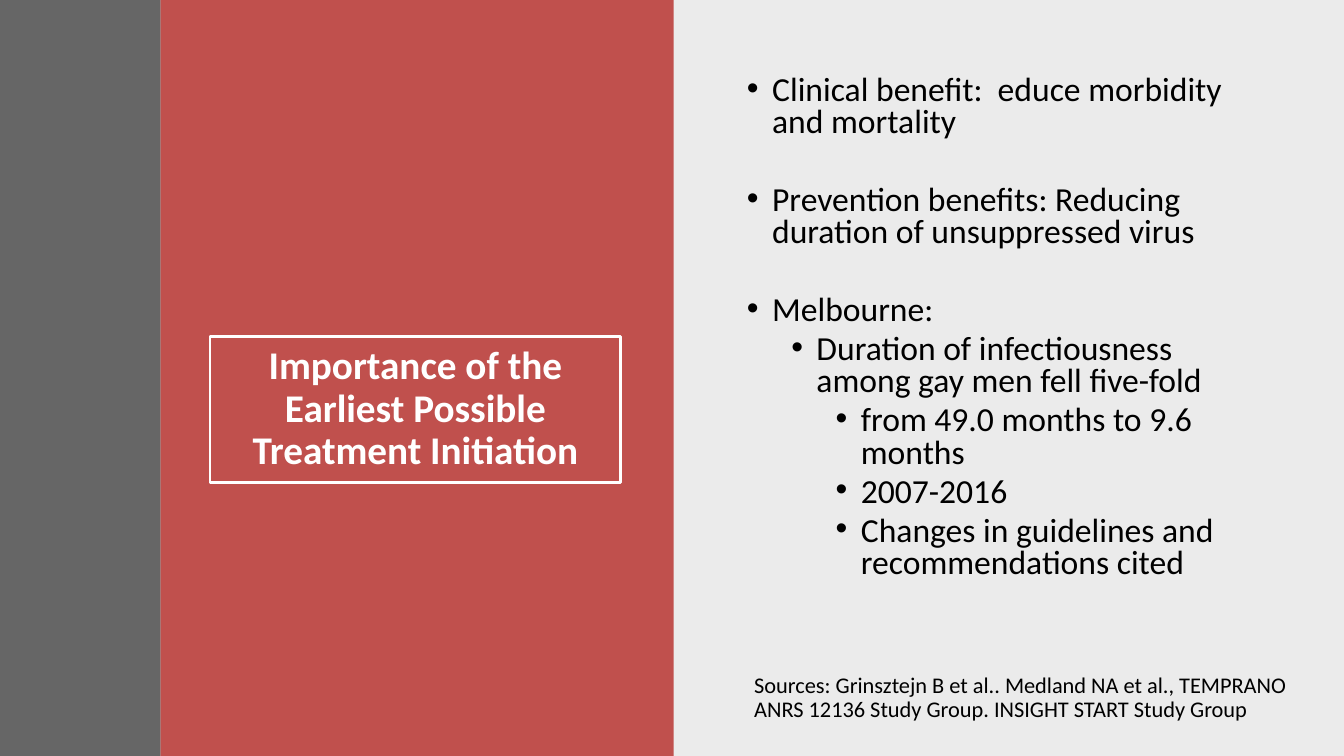
from dataclasses import dataclass

from lxml import etree
from pptx import Presentation
from pptx.dml.color import RGBColor
from pptx.enum.shapes import MSO_SHAPE
from pptx.enum.text import MSO_ANCHOR, MSO_AUTO_SIZE, PP_ALIGN
from pptx.oxml.ns import qn
from pptx.util import Inches, Pt

RECTANGLE = MSO_SHAPE.RECTANGLE
MIDDLE = MSO_ANCHOR.MIDDLE
TOP = MSO_ANCHOR.TOP
NO_AUTOFIT = MSO_AUTO_SIZE.NONE
CENTER = PP_ALIGN.CENTER
LEFT = PP_ALIGN.LEFT

COLUMNS, ROWS = 160, 90
TITLE_ONLY = 5


@dataclass(frozen=True)
class Theme:
    font: str = "Calibri"
    ink: str = "000000"
    white: str = "FFFFFF"
    red: str = "C0504D"
    grey: str = "404040"
    title_size: int = 28
    body_size: int = 24
    source_size: int = 16
    bullet_hang: float = 0.25
    first_indent: float = 0.37
    level_step: float = 0.44
    item_gap: float = 4.8
    group_gap: float = 32.6


class SlideBuilder:
    def __init__(self, deck, theme):
        self.deck = deck
        self.theme = theme
        self.page = deck.slides.add_slide(deck.slide_layouts[TITLE_ONLY])

    def frame(self, column, row, columns, rows):
        cell_width = self.deck.slide_width / COLUMNS
        cell_height = self.deck.slide_height / ROWS
        return (round(column * cell_width), round(row * cell_height),
                round(columns * cell_width), round(rows * cell_height))

    def panel(self, column, columns, color, opacity=100):
        shape = self.page.shapes.add_shape(
            RECTANGLE, *self.frame(column, 0, columns, ROWS))
        shape.shadow.inherit = False
        shape.line.fill.background()
        shape.fill.solid()
        shape.fill.fore_color.rgb = RGBColor.from_string(color)
        if opacity < 100:
            tint = shape.element.spPr.find(".//" + qn("a:srgbClr"))
            etree.SubElement(tint, qn("a:alpha"), val=str(opacity * 1000))

    def prepare(self, box, anchor):
        text = box.text_frame
        text.word_wrap = True
        text.auto_size = NO_AUTOFIT
        text.vertical_anchor = anchor
        return text

    def add_words(self, para, words, size, color, spacing, align=LEFT, bold=False):
        para.alignment = align
        para.line_spacing = spacing
        span = para.add_run()
        span.text = words
        span.font.name = self.theme.font
        span.font.size = Pt(size)
        span.font.bold = bold
        span.font.color.rgb = RGBColor.from_string(color)

    def title(self, words, *cells):
        box = self.page.shapes.title
        box.left, box.top, box.width, box.height = self.frame(*cells)
        box.line.color.rgb = RGBColor.from_string(self.theme.white)
        box.line.width = Pt(2)
        box.element.getparent().append(box.element)
        para = self.prepare(box, MIDDLE).paragraphs[0]
        self.add_words(para, words, self.theme.title_size, self.theme.white,
                       0.9, CENTER, True)

    def text_box(self, *cells):
        box = self.page.shapes.add_textbox(*self.frame(*cells))
        return self.prepare(box, TOP)

    def bullets(self, items, *cells):
        theme = self.theme
        text = self.text_box(*cells)
        for index, (level, words) in enumerate(items):
            para = text.add_paragraph() if index else text.paragraphs[0]
            self.add_words(para, words, theme.body_size, theme.ink, 0.8)
            starts_group = index and level == 0
            para.space_before = Pt(
                theme.group_gap if starts_group else theme.item_gap)
            para.level = level
            indent = theme.first_indent + level * theme.level_step
            properties = para._p.get_or_add_pPr()
            properties.set("marL", str(Inches(indent)))
            properties.set("indent", str(-Inches(theme.bullet_hang)))
            etree.SubElement(properties, qn("a:buFont"), typeface="Arial")
            etree.SubElement(properties, qn("a:buChar"), char="•")

    def source(self, words, *cells):
        para = self.text_box(*cells).paragraphs[0]
        self.add_words(para, words, self.theme.source_size, self.theme.ink, 0.9)
        para.space_after = Pt(6)


BENEFITS = [
    (0, "Clinical benefit:  educe morbidity and mortality"),
    (0, "Prevention benefits: Reducing duration of unsuppressed virus"),
    (0, "Melbourne:"),
    (1, "Duration of infectiousness among gay men fell five-fold"),
    (2, "from 49.0 months to 9.6 months"),
    (2, "2007-2016"),
    (2, "Changes in guidelines and recommendations cited"),
]


def main():
    deck = Presentation()
    deck.slide_width, deck.slide_height = Inches(13.33), Inches(7.5)
    theme = Theme()
    slide = SlideBuilder(deck, theme)
    half, stripe = COLUMNS / 2, 19.1
    slide.panel(half, half, theme.ink, 8)
    slide.panel(stripe, 61.1, theme.red)
    slide.title("Importance of the Earliest Possible Treatment Initiation",
                25, 40.1, 48.9, 17.3)
    slide.panel(0, stripe, theme.grey, 80)
    slide.bullets(BENEFITS, 86.3, 8.4, 66.4, 67.3)
    slide.source("Sources: Grinsztejn B et al.. Medland NA et al., TEMPRANO "
                 "ANRS 12136 Study Group. INSIGHT START Study Group",
                 88.6, 79.7, 66.4, 8.5)
    deck.save("out.pptx")


if __name__ == "__main__":
    main()
